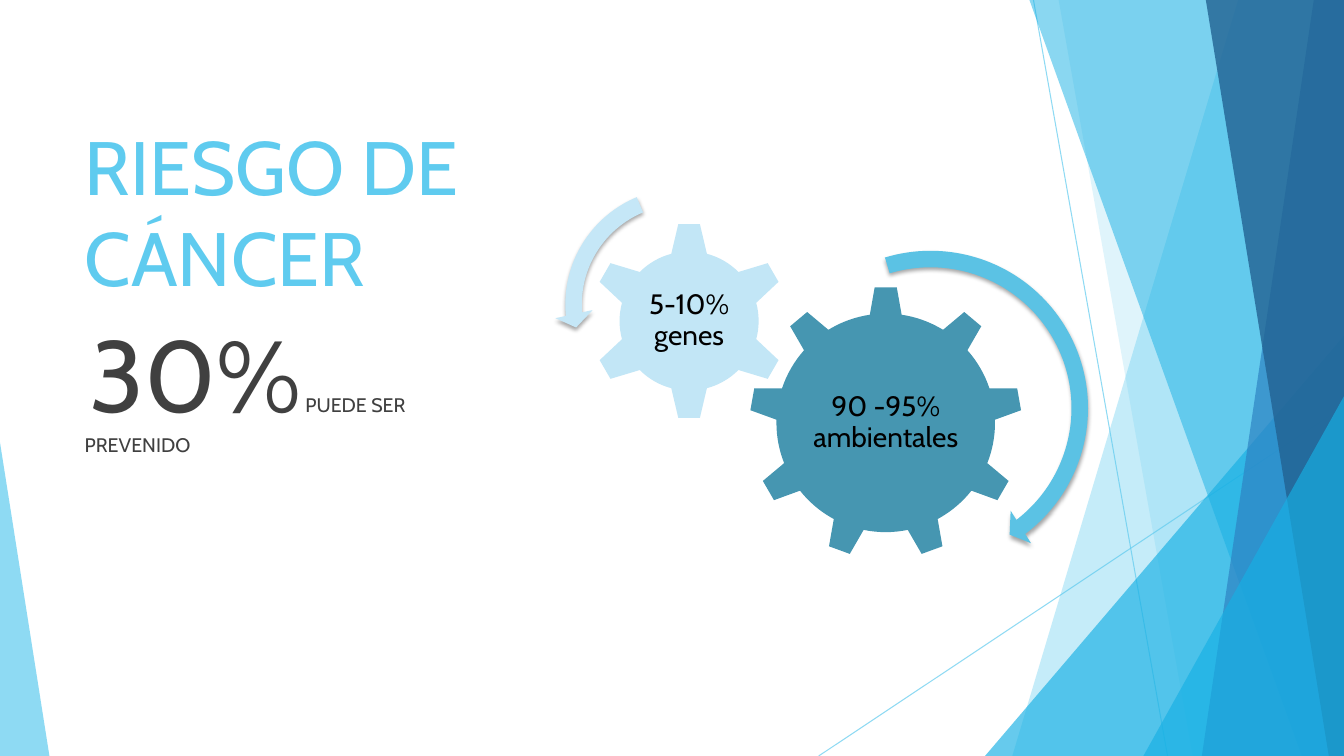
import pptx
import pptx.dml.color
import pptx.enum.shapes
import pptx.enum.text
import pptx.oxml
import pptx.oxml.ns
import pptx.util
from pptx.util import Inches

SHAPE = pptx.enum.shapes.MSO_SHAPE
ALIGN = pptx.enum.text.PP_ALIGN
ANCHOR = pptx.enum.text.MSO_ANCHOR
NS = pptx.oxml.ns.nsdecls("a")
SKY, BRIGHT, BLUE, NAVY = "5FCBEF", "17B0E4", "2E83C3", "226292"


def rgb(color):
    return pptx.dml.color.RGBColor.from_string(color)


def set_alpha(shape, opacity):
    """Set the opacity, in percent, of every solid colour of the shape."""
    for color in shape._element.spPr.iter(pptx.oxml.ns.qn("a:srgbClr")):
        color.append(pptx.oxml.parse_xml(f'<a:alpha {NS} val="{opacity * 1000}"/>'))


def paint(shape, color, opacity=100):
    shape.shadow.inherit = False
    shape.fill.solid()
    shape.fill.fore_color.rgb = rgb(color)
    shape.line.fill.background()
    if opacity < 100:
        set_alpha(shape, opacity)


def add_shape(slide, kind, box, color, opacity=100, adjustments=()):
    shape = slide.shapes.add_shape(kind, *map(Inches, box))
    for index, value in enumerate(adjustments):
        shape.adjustments[index] = value
    paint(shape, color, opacity)
    return shape


def write(shape, runs, color="000000", align=ALIGN.LEFT, anchor=ANCHOR.TOP,
          inset=None, line_spacing=1.0, before=0):
    """Fill the shape with one paragraph of (text, size) runs."""
    frame = shape.text_frame
    frame.word_wrap = True
    frame.auto_size = pptx.enum.text.MSO_AUTO_SIZE.NONE
    frame.vertical_anchor = anchor
    if inset is not None:
        frame.margin_left = frame.margin_right = Inches(inset)
        frame.margin_top = frame.margin_bottom = Inches(inset)
    paragraph = frame.paragraphs[0]
    paragraph.alignment = align
    paragraph.line_spacing = line_spacing
    paragraph.space_before = pptx.util.Pt(before)
    for text, size in runs:
        run = paragraph.add_run()
        run.text = text
        run.font.name = "Cabin"
        run.font.size = pptx.util.Pt(size)
        run.font.color.rgb = rgb(color)
    return paragraph


def place(shape, left, top, width, height):
    shape.left, shape.top = Inches(left), Inches(top)
    shape.width, shape.height = Inches(width), Inches(height)


def add_ray(slide, start, end):
    ray = slide.shapes.add_connector(
        pptx.enum.shapes.MSO_CONNECTOR.STRAIGHT, *map(Inches, (*start, *end)))
    ray.line.color.rgb = rgb(SKY)
    ray.line.width = pptx.util.Pt(0.75)
    set_alpha(ray, 70)
    ray._element.spPr.append(pptx.oxml.parse_xml(f"<a:effectLst {NS}/>"))


def add_facets(slide, left, top, width, height):
    """Draw the translucent facets that hang on the right edge of the box."""
    right, bottom = left + width, top + height

    def add_band(top_offset, bottom_offset, color, opacity):
        corners = [(left + top_offset, top), (right, top), (right, bottom),
                   (left + bottom_offset, bottom)]
        points = [(Inches(x), Inches(y)) for x, y in corners]
        builder = slide.shapes.build_freeform(*points[0])
        builder.add_line_segments(points[1:], close=True)
        paint(builder.convert_to_shape(), color, opacity)

    def add_corner(corner_width, corner_height):
        add_shape(slide, SHAPE.ISOSCELES_TRIANGLE,
                  (right - corner_width, bottom - corner_height,
                   corner_width, corner_height), BRIGHT, 66, [1])

    add_ray(slide, (left + 2.13, top), (left + 3.46, bottom))
    add_ray(slide, (right, top + 4.03), (left, bottom))
    add_band(4.16, 1.92, SKY, 36)
    add_band(2.38, 3.71, SKY, 20)
    add_corner(3.56, 4.17)
    add_band(2.09, 4.79, BRIGHT, 50)
    add_band(4.91, 3.8, BLUE, 70)
    add_band(3.84, 5.06, NAVY, 80)
    add_corner(1.99, 3.57)


def add_left_wedge(slide, left, top, width, height):
    add_shape(slide, SHAPE.ISOSCELES_TRIANGLE, (left, top, width, height), SKY, 70, [0])


def add_message(slide, left, top, width, title_height, body_height):
    title, body = slide.placeholders[0], slide.placeholders[1]
    place(title, left, top, width, title_height)
    write(title, [("RIESGO DE CÁNCER", 54)], color=SKY, anchor=ANCHOR.BOTTOM)
    place(body, left, top + title_height, width, body_height)
    prevention = write(body, [(" ", 14), ("30%", 72), (" PUEDE SER PREVENIDO", 14)],
                       color="404040", before=10)
    properties = prevention._p.get_or_add_pPr()
    properties.set("marL", "0")
    properties.set("indent", "0")
    properties.append(pptx.oxml.parse_xml(f"<a:buNone {NS}/>"))


def add_gear(slide, kind, left, top, size, color, label, label_width, label_height):
    add_shape(slide, kind, (left, top, size, size), color)
    box = (left + (size - label_width) / 2, top + (size - label_height) / 2,
           label_width, label_height)
    write(slide.shapes.add_textbox(*map(Inches, box)), [(label, 20)],
          align=ALIGN.CENTER, anchor=ANCHOR.MIDDLE, inset=0.03, line_spacing=0.9)


def add_turn_arrow(slide, kind, left, top, size, color, adjustments):
    arrow = add_shape(slide, kind, (left, top, size, size), color,
                      adjustments=adjustments)
    effects = arrow._element.spPr.find(pptx.oxml.ns.qn("a:effectLst"))
    effects.append(pptx.oxml.parse_xml(
        f'<a:outerShdw {NS} blurRad="38100" dist="25400" dir="5400000" rotWithShape="0">'
        '<a:srgbClr val="000000"><a:alpha val="35000"/></a:srgbClr></a:outerShdw>'))


def add_risk_gears(slide, left, top):
    add_gear(slide, SHAPE.GEAR_9, left + 1.93, top + 1.08, 2.71, "4696B1",
             "90 -95% ambientales", 1.62, 1.4)
    add_gear(slide, SHAPE.GEAR_6, left + 0.35, top + 0.44, 1.97, "C2E6F6",
             "5-10% genes", 0.98, 0.97)
    add_turn_arrow(slide, SHAPE.CIRCULAR_ARROW, left + 2.06, top + 0.62, 3.34,
                   "5BC2E4", [0.049, 3.126, 31.665, 151.892, 0.057])
    add_turn_arrow(slide, SHAPE.LEFT_CIRCULAR_ARROW, left, top, 2.52,
                   "C5E7F7", [0.065, 4.3, 104.891, 148.378, 0.075])


def main():
    deck = pptx.Presentation()
    deck.slide_width, deck.slide_height = Inches(13.33), Inches(7.5)
    slide = deck.slides.add_slide(deck.slide_layouts[1])
    add_facets(slide, 8.12, 0, 5.21, 7.5)
    add_left_wedge(slide, 0, 4.39, 0.49, 3.11)
    add_message(slide, 0.74, 1.64, 4.22, 1.4, 2.83)
    add_risk_gears(slide, 5.5, 1.76)
    deck.save("out.pptx")


if __name__ == "__main__":
    main()
